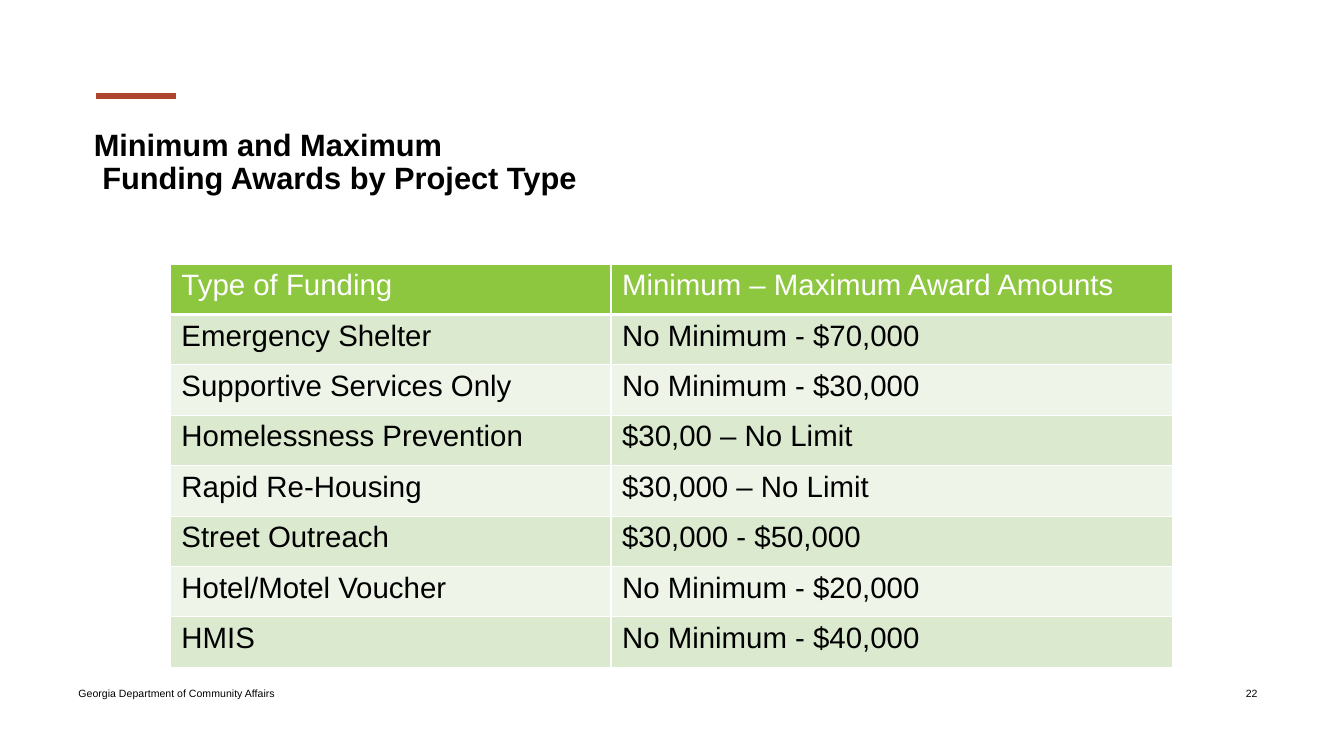
from lxml.etree import SubElement
from pptx import Presentation
from pptx.dml.color import RGBColor
from pptx.enum.shapes import MSO_CONNECTOR
from pptx.enum.text import MSO_ANCHOR, MSO_AUTO_SIZE, PP_ALIGN
from pptx.oxml.ns import qn
from pptx.util import Emu, Pt

PX = 9144  # 100 px to the inch
FONT = "Arial"
COLORS = {
    "text": "000000",
    "accent": "AE462D",
    "header": "8DC63F",
    "band_dark": "DBEACF",
    "band_light": "EEF5E8",
    "white": "FFFFFF",
}
AWARDS = [
    ("Type of Funding", "Minimum – Maximum Award Amounts"),
    ("Emergency Shelter", "No Minimum - $70,000"),
    ("Supportive Services Only", "No Minimum - $30,000"),
    ("Homelessness Prevention", "$30,00 – No Limit"),
    ("Rapid Re-Housing", "$30,000 – No Limit"),
    ("Street Outreach", "$30,000 - $50,000"),
    ("Hotel/Motel Voucher", "No Minimum - $20,000"),
    ("HMIS", "No Minimum - $40,000"),
]


def px(n):
    return Emu(n * PX)


def color(name):
    return RGBColor.from_string(COLORS[name])


def format_runs(p, size, name="text", bold=False):
    for r in p.runs:
        r.font.name = FONT
        r.font.size = Pt(size)
        r.font.bold = bold
        r.font.color.rgb = color(name)


def set_title(s, text, x, y, w, h):
    title = s.shapes.title
    title.left, title.top, title.width, title.height = map(px, (x, y, w, h))
    tf = title.text_frame
    tf.text = text
    tf.word_wrap = True
    tf.auto_size = MSO_AUTO_SIZE.NONE
    tf.vertical_anchor = MSO_ANCHOR.TOP
    p = tf.paragraphs[0]
    p.alignment = PP_ALIGN.LEFT
    p.line_spacing = 0.9
    p.space_before = Pt(0)
    format_runs(p, 22, bold=True)


def add_footer_text(s, text, x, y, w, h, align=PP_ALIGN.LEFT):
    tf = s.shapes.add_textbox(px(x), px(y), px(w), px(h)).text_frame
    tf.text = text
    tf.word_wrap = True
    tf.vertical_anchor = MSO_ANCHOR.MIDDLE
    p = tf.paragraphs[0]
    p.alignment = align
    format_runs(p, 7.5)


def add_accent_line(s, x1, x2, y):
    line = s.shapes.add_connector(MSO_CONNECTOR.STRAIGHT, px(x1), px(y), px(x2), px(y))
    line.line.color.rgb = color("accent")
    line.line.width = Pt(4.5)
    SubElement(line._element.spPr, qn("a:effectLst"))


def set_borders(cell, **widths):
    """Draw white borders; widths are points by side, in the order L, R, T, B."""
    tcPr = cell._tc.get_or_add_tcPr()
    for side, width in widths.items():
        ln = SubElement(tcPr, qn(f"a:ln{side}"), w=str(Pt(width)))
        fill = SubElement(ln, qn("a:solidFill"))
        SubElement(fill, qn("a:srgbClr"), val=COLORS["white"])


def add_awards_table(s, x, y, col_widths, row_height):
    table = s.shapes.add_table(
        len(AWARDS), len(col_widths), px(x), px(y),
        px(sum(col_widths)), px(row_height * len(AWARDS)),
    ).table
    for column, width in zip(table.columns, col_widths):
        column.width = px(width)
    for i, row in enumerate(AWARDS):
        table.rows[i].height = px(row_height)
        band = "header" if i == 0 else "band_dark" if i % 2 else "band_light"
        for j, text in enumerate(row):
            cell = table.cell(i, j)
            set_borders(cell, L=1, R=1, T=3 if i == 1 else 1, B=3 if i == 0 else 1)
            cell.fill.solid()
            cell.fill.fore_color.rgb = color(band)
            cell.margin_left = cell.margin_right = px(11)
            cell.margin_top = cell.margin_bottom = px(5)
            cell.text = text
            format_runs(cell.text_frame.paragraphs[0], 21, "text" if i else "white")


def main():
    prs = Presentation()
    prs.slide_width, prs.slide_height = px(1333), px(750)
    s = prs.slides.add_slide(prs.slide_layouts[5])
    add_footer_text(s, "Georgia Department of Community Affairs", 68, 668, 450, 40)
    add_footer_text(s, "22", 1208, 651, 67, 74, PP_ALIGN.CENTER)
    set_title(s, "Minimum and Maximum\v Funding Awards by Project Type", 83, 124, 1065, 121)
    add_accent_line(s, 95, 175, 95)
    add_awards_table(s, 169, 262, (437, 557), 50)
    prs.save("out.pptx")


if __name__ == "__main__":
    main()
